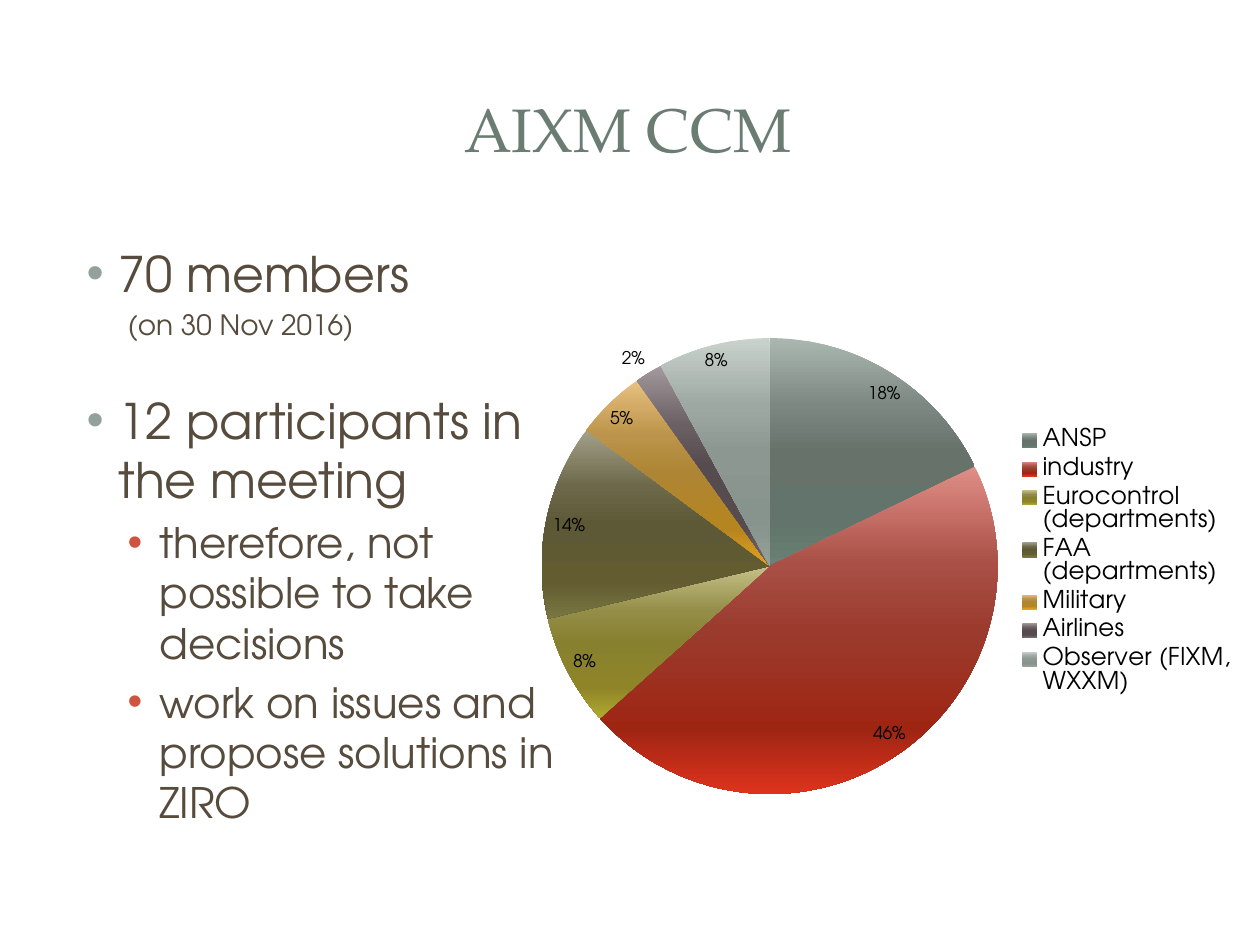
from lxml.etree import SubElement
from pptx import Presentation
from pptx.chart.data import CategoryChartData
from pptx.dml.color import RGBColor
from pptx.enum.chart import XL_CHART_TYPE as ChartType
from pptx.enum.chart import XL_LABEL_POSITION as LabelPos
from pptx.enum.chart import XL_LEGEND_POSITION as LegendPos
from pptx.enum.shapes import MSO_SHAPE as Shape
from pptx.enum.text import MSO_ANCHOR as Anchor
from pptx.enum.text import MSO_AUTO_SIZE as AutoSize
from pptx.enum.text import PP_ALIGN as Align
from pptx.oxml.ns import qn
from pptx.util import Pt

PX = 914400 // 126  # EMU per px

# Content
TITLE = "AIXM CCM"
# text, style, space before in points
POINTS = [
    ("70 members", "main", 5.6),
    ("(on 30 Nov 2016)", "note", 3.2),
    ("12 participants in the meeting", "main", 28),
    ("therefore, not possible to take decisions", "sub", 4.8),
    ("work on issues and propose solutions in ZIRO", "sub", 4.8),
]
# category, percent, gradient colours from top to bottom
MEMBERS = [
    ("ANSP", 18, ("AAB6B0", "7C8782", "66726A", "62746B", "6A8175")),
    ("industry", 46, ("E08E88", "A94F45", "9B3B2E", "9F2513", "DF331D")),
    ("Eurocontrol (departments)", 8, ("C5C088", "948D48", "87802F", "8F8528", "B0A92F")),
    ("FAA (departments)", 14, ("A3A08A", "6C6849", "5D5836", "625C30", "7A7642")),
    ("Military", 5, ("E8C080", "BB934A", "AE8534", "B5851F", "E6A21E")),
    ("Airlines", 2, ("A39A9D", "6A5F63", "564B4F", "564A4E", "786C71")),
    ("Observer (FIXM, WXXM)", 8, ("C9D2CD", "9EA8A3", "8C9791", "87938D", "93A299")),
]

# Theme
THEME = {
    "title_font": "TeX Gyre Pagella", "title_size": 35, "title_color": "6B7D72",
    "body_font": "TeX Gyre Adventor", "body_color": "564B3C",
    "chart_color": "000000", "label_size": 10, "legend_size": 14,
    "panel_color": "FFFFFF", "gradient_stops": (0, 30, 50, 80, 100),
    # level, size, left margin px, first line px, bullet colour
    "styles": {
        "main": (0, 28, 47, -32, "93A299"),
        "note": (1, 16, 56, 0, None),
        "sub": (1, 24, 88, -32, "CF543F"),
    },
}

# Boxes in px: left, top, width, height
PANELS = [  # back to front: shape, box, opacity in percent
    (Shape.ROUNDED_RECTANGLE, (13, 14, 1235, 919), 100),
    (Shape.RECTANGLE, (38, 38, 1184, 183), 83),
    (Shape.RECTANGLE, (52, 52, 1154, 154), 100),
]
PANEL_ROUNDING = 0.02
TITLE_BOX = (59, 57, 1138, 143)
BODY_BOX = (59, 237, 557, 607)
CHART_BOX = (525, 242, 726, 640)
PIE_BOX = (542, 338, 456, 456)
LEGEND_BOX = (1016, 424, 222, 276)


def place(shape, box):
    shape.left, shape.top, shape.width, shape.height = (n * PX for n in box)


def style_font(font, name, size, color):
    font.name, font.size = name, Pt(size)
    font.color.rgb = RGBColor.from_string(color)


def set_bullet(paragraph, margin, first_line, color):
    props = paragraph._p.get_or_add_pPr()
    props.set("marL", str(margin * PX))
    props.set("indent", str(first_line * PX))
    if color is None:
        SubElement(props, qn("a:buNone"))
        return
    SubElement(SubElement(props, qn("a:buClr")), qn("a:srgbClr")).set("val", color)
    SubElement(props, qn("a:buFont")).set("typeface", "Arial")
    SubElement(props, qn("a:buChar")).set("char", "•")


def set_layout(element, box, inner=False):
    """Fix a chart part at a px box, as fractions of the chart."""
    layout = element.find(qn("c:layout"))
    if layout is None:
        layout = SubElement(element, qn("c:layout"))
        first = element.find(qn("c:legendPos"))
        if first is None:
            element.insert(0, layout)
        else:
            first.addnext(layout)
    manual = SubElement(layout, qn("c:manualLayout"))
    left, top, width, height = CHART_BOX
    values = [("xMode", "edge"), ("yMode", "edge"),
              ("x", round((box[0] - left) / width, 3)),
              ("y", round((box[1] - top) / height, 3)),
              ("w", round(box[2] / width, 3)), ("h", round(box[3] / height, 3))]
    if inner:
        values.insert(0, ("layoutTarget", "inner"))
    for tag, value in values:
        SubElement(manual, qn(f"c:{tag}")).set("val", str(value))


prs = Presentation()
prs.slide_width, prs.slide_height = 1260 * PX, 945 * PX
slide = prs.slides.add_slide(prs.slide_layouts[1])
title, body = slide.placeholders

# Background panels, moved behind the text
for kind, box, opacity in PANELS:
    panel = slide.shapes.add_shape(kind, *(n * PX for n in box))
    panel.shadow.inherit = False
    panel.fill.solid()
    panel.fill.fore_color.rgb = RGBColor.from_string(THEME["panel_color"])
    panel.line.fill.background()
    if kind == Shape.ROUNDED_RECTANGLE:
        panel.adjustments[0] = PANEL_ROUNDING
    if opacity < 100:
        color = panel._element.spPr.find(qn("a:solidFill"))[0]
        SubElement(color, qn("a:alpha")).set("val", str(opacity * 1000))
    title._element.addprevious(panel._element)

# Title
place(title, TITLE_BOX)
title.text_frame.text = TITLE
title.text_frame.vertical_anchor = Anchor.MIDDLE
heading = title.text_frame.paragraphs[0]
heading.alignment = Align.CENTER
style_font(heading.runs[0].font, THEME["title_font"], THEME["title_size"], THEME["title_color"])

# Bulleted list
place(body, BODY_BOX)
body.text_frame.text = "\n".join(text for text, _, _ in POINTS)
body.text_frame.auto_size = AutoSize.NONE
for paragraph, (_, style, gap) in zip(body.text_frame.paragraphs, POINTS):
    level, size, margin, first_line, bullet_color = THEME["styles"][style]
    paragraph.level = level
    paragraph.space_before = Pt(gap)
    set_bullet(paragraph, margin, first_line, bullet_color)
    style_font(paragraph.runs[0].font, THEME["body_font"], size, THEME["body_color"])

# Pie chart of members
data = CategoryChartData()
data.categories = [name for name, _, _ in MEMBERS]
data.add_series("Series 1", [share for _, share, _ in MEMBERS])
chart = slide.shapes.add_chart(
    ChartType.PIE, *(n * PX for n in CHART_BOX), data).chart
chart.has_title = False
style_font(chart.font, THEME["body_font"], THEME["label_size"], THEME["chart_color"])
pie = chart.plots[0]
pie.vary_by_categories = True
set_layout(chart._chartSpace.chart.plotArea, PIE_BOX, inner=True)

# Slices with vertical gradients
members = pie.series[0]
for index in range(len(MEMBERS)):
    fill = members.points[index].format.fill
    fill.gradient()
    fill.gradient_angle = 270
for stops, (_, _, colors) in zip(members._element.iter(qn("a:gsLst")), MEMBERS):
    for old in list(stops):
        stops.remove(old)
    for position, color in zip(THEME["gradient_stops"], colors):
        stop = SubElement(stops, qn("a:gs"))
        stop.set("pos", str(position * 1000))
        SubElement(stop, qn("a:srgbClr")).set("val", color)

# Percent labels
pie.has_data_labels = True
labels = pie.data_labels
labels.show_value, labels.show_percentage = False, True
labels.number_format, labels.number_format_is_linked = "0%", False
labels.position = LabelPos.BEST_FIT
style_font(labels.font, THEME["body_font"], THEME["label_size"], THEME["chart_color"])

# Legend
chart.has_legend = True
legend = chart.legend
legend.position = LegendPos.RIGHT
legend.include_in_layout = False
style_font(legend.font, THEME["body_font"], THEME["legend_size"], THEME["chart_color"])
set_layout(legend._element, LEGEND_BOX)

prs.save("out.pptx")
